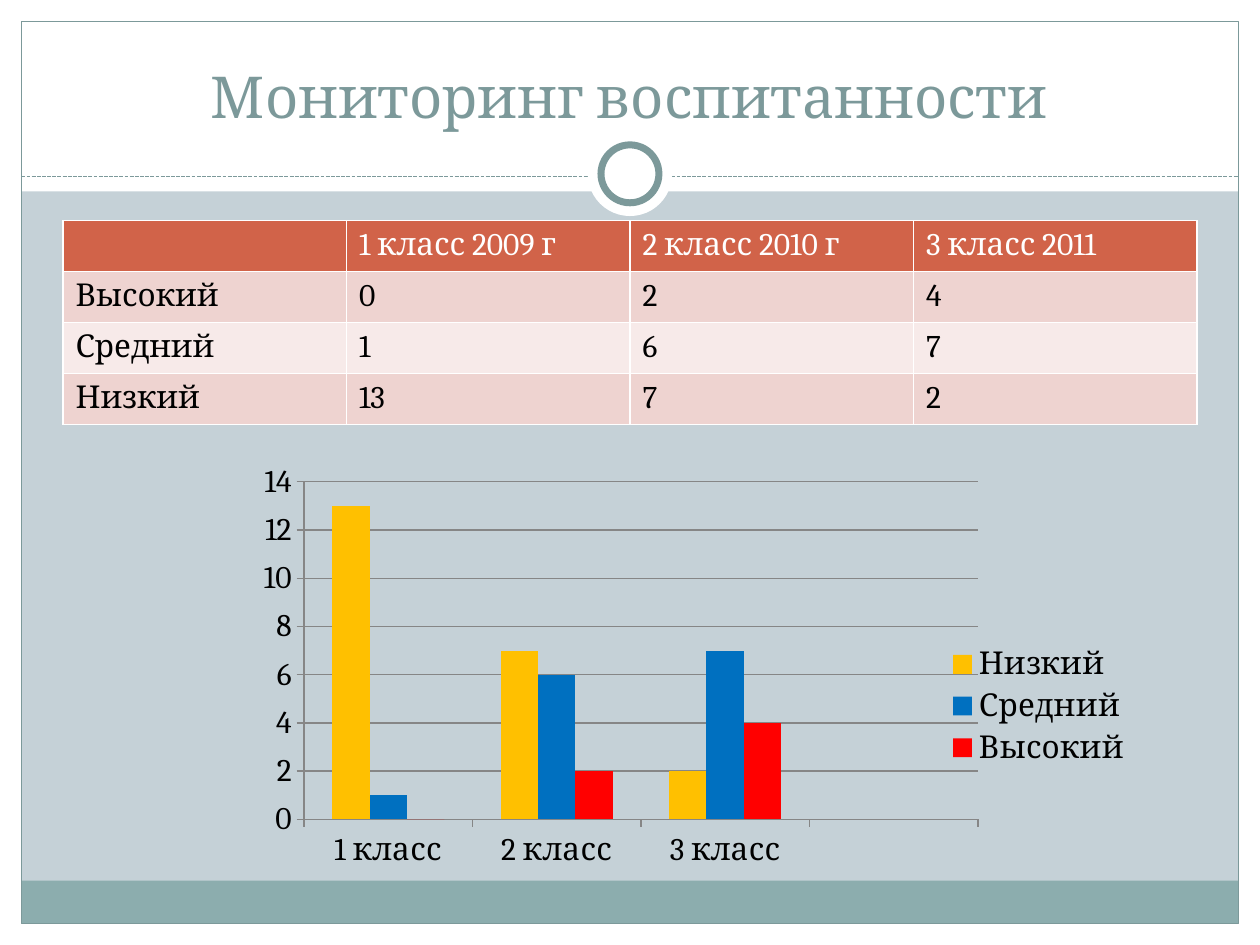
import pptx
import pptx.chart.data
import pptx.dml.color
import pptx.enum.chart
import pptx.enum.dml
import pptx.enum.shapes
import pptx.enum.text
import pptx.oxml
import pptx.oxml.ns
import pptx.util
from pptx.util import Inches

COLORS = {
    "ground": "C5D1D7", "white": "FFFFFF", "black": "000000",
    "teal": "7C999A", "footer": "8CADAE", "header": "D16349",
    "band_dark": "EED3D0", "band_light": "F7EAE9", "grid": "868686",
    "low": "FFC000", "middle": "0070C0", "high": "FF0000",
}
FONT = "Cambria"
SHAPE = pptx.enum.shapes.MSO_SHAPE
YEARS = ["1 класс 2009 г", "2 класс 2010 г", "3 класс 2011"]
GRADES = ["1 класс", "2 класс", "3 класс", ""]
LEVELS = [
    ("Высокий", [0, 2, 4], "high"),
    ("Средний", [1, 6, 7], "middle"),
    ("Низкий", [13, 7, 2], "low"),
]


def rgb(name):
    return pptx.dml.color.RGBColor.from_string(COLORS[name])


def paint(fill, color):
    fill.solid()
    fill.fore_color.rgb = rgb(color)


def stroke(line, color, width):
    paint(line.fill, color)
    line.width = pptx.util.Pt(width)


def write(frame, text, size=18, color="black", align=None, anchor=None):
    frame.word_wrap = True
    if anchor is not None:
        frame.vertical_anchor = anchor
    paragraph = frame.paragraphs[0]
    paragraph.alignment = align
    run = paragraph.add_run()
    run.text = text
    run.font.name = FONT
    run.font.size = pptx.util.Pt(size)
    run.font.color.rgb = rgb(color)


def add_part(slide, kind, box, fill=None, line=None, width=0.75):
    part = slide.shapes.add_shape(kind, *map(Inches, box))
    part.shadow.inherit = False
    if fill:
        paint(part.fill, fill)
    else:
        part.fill.background()
    if line:
        stroke(part.line, line, width)
    else:
        part.line.fill.background()


def add_rule(slide, left, right, y):
    rule = slide.shapes.add_connector(
        pptx.enum.shapes.MSO_CONNECTOR.STRAIGHT,
        Inches(left), Inches(y), Inches(right), Inches(y))
    stroke(rule.line, "teal", 0.75)
    rule.line.dash_style = pptx.enum.dml.MSO_LINE.SQUARE_DOT
    properties = rule.element.find(pptx.oxml.ns.qn("p:spPr"))
    pptx.oxml.ns.qn("a:effectLst")
    properties.append(pptx.oxml.parse_xml(
        "<a:effectLst %s/>" % pptx.oxml.ns.nsdecls("a")))


def add_backdrop(slide, left, top, width, height):
    margin, head, footer = 0.17, 1.52, 0.34
    right, bottom = left + width, top + height
    inner = width - 2 * margin
    for box in (
        (left, bottom - margin, width, margin),
        (left, top, width, head),
        (left, top, margin, height),
        (right - margin, top, margin, height),
    ):
        add_part(slide, SHAPE.RECTANGLE, box, "white")
    add_part(slide, SHAPE.RECTANGLE,
             (left + margin, bottom - margin - footer, inner, footer), "footer")
    add_part(slide, SHAPE.RECTANGLE,
             (left + margin, top + margin, inner, height - 2 * margin), line="teal")
    add_rule(slide, left + margin, right - margin, top + 1.4)
    center_x, center_y = left + width / 2, top + 1.38
    for size, line in ((0.67, None), (0.46, "teal")):
        add_part(slide, SHAPE.OVAL,
                 (center_x - size / 2, center_y - size / 2, size, size),
                 "white", line, 4)


def add_title(slide, *box):
    title = slide.shapes.add_textbox(*map(Inches, box))
    write(title.text_frame, "Мониторинг воспитанности", size=33, color="teal",
          align=pptx.enum.text.PP_ALIGN.CENTER,
          anchor=pptx.enum.text.MSO_ANCHOR.BOTTOM)


def add_borders(cell):
    properties = cell._tc.get_or_add_tcPr()
    for index, side in enumerate(("lnL", "lnR", "lnT", "lnB")):
        properties.insert(index, pptx.oxml.parse_xml(
            '<a:%s %s w="12700"><a:solidFill><a:srgbClr val="%s"/></a:solidFill></a:%s>'
            % (side, pptx.oxml.ns.nsdecls("a"), COLORS["white"], side)))


def add_results_table(slide, left, top, width, height):
    rows = [["", *YEARS]] + [[name, *map(str, counts)] for name, counts, _ in LEVELS]
    table = slide.shapes.add_table(
        len(rows), len(rows[0]), *map(Inches, (left, top, width, height))).table
    for row_index, row in enumerate(rows):
        table.rows[row_index].height = Inches(height / len(rows))
        band = "band_dark" if row_index % 2 else "band_light"
        for column_index, text in enumerate(row):
            cell = table.cell(row_index, column_index)
            paint(cell.fill, band if row_index else "header")
            add_borders(cell)
            if text:
                write(cell.text_frame, text, color="black" if row_index else "white")


def set_layout(parent, position, x, y, w, h, inner=False):
    target = '<c:layoutTarget val="inner"/>' if inner else ""
    for old in parent.findall(pptx.oxml.ns.qn("c:layout")):
        parent.remove(old)
    parent.insert(position, pptx.oxml.parse_xml(
        '<c:layout %s><c:manualLayout>%s<c:xMode val="edge"/><c:yMode val="edge"/>'
        '<c:x val="%s"/><c:y val="%s"/><c:w val="%s"/><c:h val="%s"/>'
        '</c:manualLayout></c:layout>'
        % (pptx.oxml.ns.nsdecls("c"), target, x, y, w, h)))


def add_results_chart(slide, *box):
    levels = LEVELS[::-1]
    data = pptx.chart.data.CategoryChartData()
    data.categories = GRADES
    for name, counts, _ in levels:
        data.add_series(name, [*counts, None])
    chart = slide.shapes.add_chart(
        pptx.enum.chart.XL_CHART_TYPE.COLUMN_CLUSTERED,
        *map(Inches, box), data).chart
    chart.has_title = False
    chart.font.name = FONT
    chart.font.size = pptx.util.Pt(18)
    chart.font.color.rgb = rgb("black")

    plot = chart.plots[0]
    plot.gap_width = 150
    plot.overlap = 0
    plot.vary_by_categories = False
    for series, (_, _, color) in zip(plot.series, levels):
        paint(series.format.fill, color)

    counts_axis = chart.value_axis
    counts_axis.minimum_scale = 0
    counts_axis.maximum_scale = 14
    counts_axis.major_unit = 2
    counts_axis.has_major_gridlines = True
    stroke(counts_axis.major_gridlines.format.line, "grid", 0.75)
    for axis in (counts_axis, chart.category_axis):
        axis.major_tick_mark = pptx.enum.chart.XL_TICK_MARK.OUTSIDE
        stroke(axis.format.line, "grid", 0.75)

    chart.has_legend = True
    legend = chart.legend
    legend.position = pptx.enum.chart.XL_LEGEND_POSITION.RIGHT
    legend.include_in_layout = False
    set_layout(plot._element.getparent(), 0, 0.1, 0.04, 0.72, 0.7, inner=True)
    set_layout(legend._element, 1, 0.78, 0.37, 0.21, 0.27)


def main():
    presentation = pptx.Presentation()
    presentation.slide_width = Inches(10)
    presentation.slide_height = Inches(7.5)
    slide = presentation.slides.add_slide(presentation.slide_layouts[6])
    paint(slide.background.fill, "ground")
    add_backdrop(slide, 0, 0, 10, 7.5)
    add_title(slide, 0.33, 0.25, 9.33, 0.83)
    add_results_table(slide, 0.5, 1.75, 9, 1.62)
    add_results_chart(slide, 1.67, 3.67, 7.43, 3.83)
    presentation.save("out.pptx")


if __name__ == "__main__":
    main()
